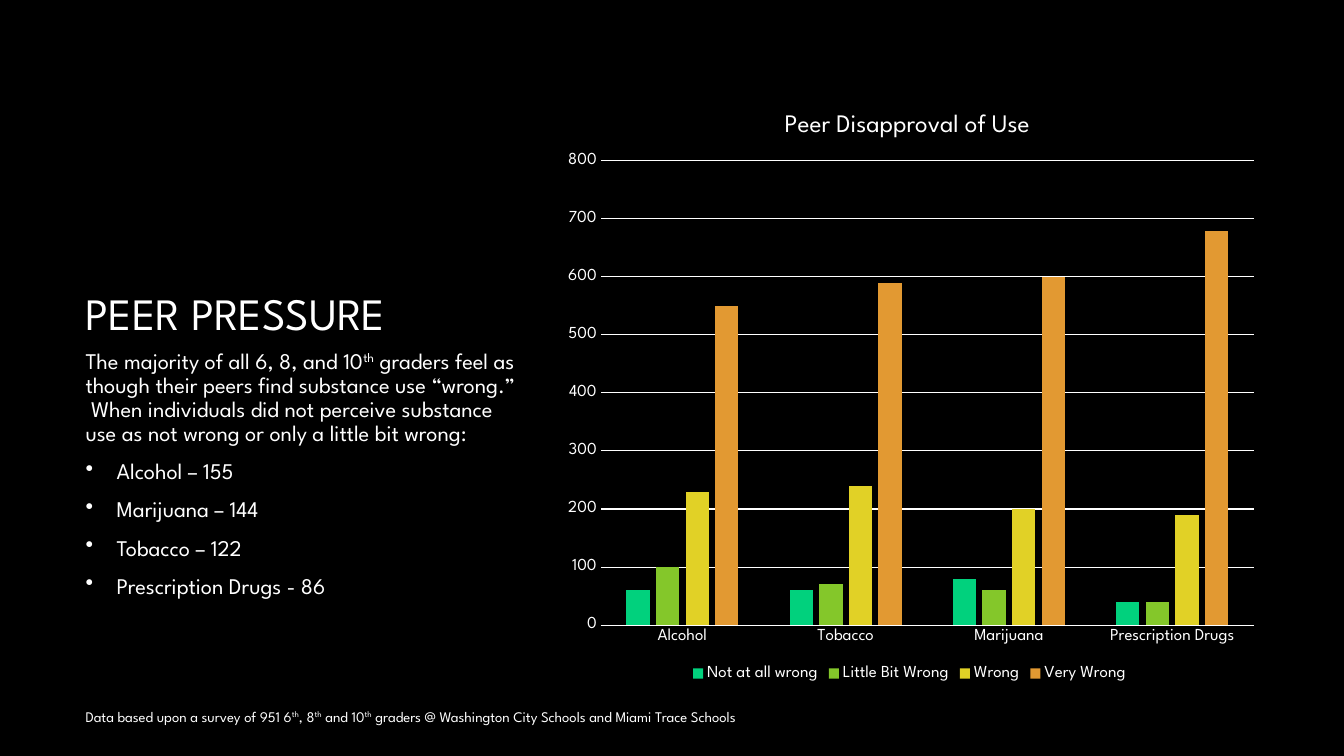
"""Build the peer pressure slide with a clustered column chart."""
from lxml import etree
from pptx import Presentation
from pptx.chart.data import CategoryChartData
from pptx.dml.color import RGBColor
from pptx.enum.chart import XL_CHART_TYPE, XL_LEGEND_POSITION, XL_TICK_MARK
from pptx.enum.text import MSO_ANCHOR
from pptx.util import Inches, Pt

COLUMNS = XL_CHART_TYPE.COLUMN_CLUSTERED
BOTTOM_LEGEND = XL_LEGEND_POSITION.BOTTOM
NO_TICK = XL_TICK_MARK.NONE
TOP, BOTTOM = MSO_ANCHOR.TOP, MSO_ANCHOR.BOTTOM
BLACK = RGBColor(0x00, 0x00, 0x00)
WHITE = RGBColor(0xFF, 0xFF, 0xFF)
GREEN = RGBColor(0x01, 0xD1, 0x7D)
LIME = RGBColor(0x84, 0xC7, 0x2A)
YELLOW = RGBColor(0xE1, 0xD1, 0x26)
ORANGE = RGBColor(0xE2, 0x99, 0x32)
FONT = "League Spartan"
DRAWING = "{http://schemas.openxmlformats.org/drawingml/2006/main}"
CHART = "{http://schemas.openxmlformats.org/drawingml/2006/chart}"


def add_text(page, left, top, width, height, anchor, size, paragraphs):
    """Add a text box; a run reading "th" is raised."""
    box = page.shapes.add_textbox(Inches(left), Inches(top), Inches(width), Inches(height))
    frame = box.text_frame
    frame.word_wrap = True
    frame.vertical_anchor = anchor
    for index, runs in enumerate(paragraphs):
        para = frame.add_paragraph() if index else frame.paragraphs[0]
        for text in runs:
            span = para.add_run()
            span.text = text
            span.font.name = FONT
            span.font.size = Pt(size)
            span.font.color.rgb = WHITE
            if text == "th":
                span.font._element.set("baseline", "30000")
    return frame


def place(element, index, **fractions):
    """Fix a chart part at fractions of the chart area."""
    for old in element.findall(CHART + "layout"):
        element.remove(old)
    layout = etree.Element(CHART + "layout")
    manual = etree.SubElement(layout, CHART + "manualLayout")
    if "w" in fractions:
        etree.SubElement(manual, CHART + "layoutTarget", val="inner")
    for mode in ("xMode", "yMode"):
        etree.SubElement(manual, CHART + mode, val="edge")
    for name, value in fractions.items():
        etree.SubElement(manual, CHART + name, val=str(value))
    element.insert(index, layout)


deck = Presentation()
deck.slide_width, deck.slide_height = Inches(13.33), Inches(7.5)
page = deck.slides.add_slide(deck.slide_layouts[6])
page.background.fill.solid()
page.background.fill.fore_color.rgb = BLACK

heading = add_text(page, 0.75, 1.67, 4.5, 1.75, BOTTOM, 32, [["PEER PRESSURE"]])
heading.paragraphs[0].line_spacing = 0.9

body = add_text(page, 0.75, 3.42, 4.5, 3.38, TOP, 16, [
    ["The majority of all 6, 8, and 10", "th",
     " graders feel as though their peers find substance use “wrong.”  When individuals "
     "did not perceive substance use as not wrong or only a little bit wrong:"],
    ["Alcohol – 155"],
    ["Marijuana – 144"],
    ["Tobacco – 122"],
    ["Prescription Drugs - 86"],
])
for index, para in enumerate(body.paragraphs):
    para.line_spacing = 0.9
    if index:
        para.space_before = Pt(10)
        properties = para._p.get_or_add_pPr()
        properties.set("marL", str(Inches(0.31)))
        properties.set("indent", str(-Inches(0.31)))
        etree.SubElement(properties, DRAWING + "buChar", char="•")

note = add_text(page, 0.75, 6.95, 8.5, 0.4, TOP, 10.5, [
    ["Data based upon a survey of 951 6", "th", ", 8", "th", " and 10", "th",
     " graders @ Washington City Schools and Miami Trace Schools"],
])
note.margin_top = Inches(0.07)

series_rows = [
    ("Not at all wrong", (60, 60, 80, 40), GREEN),
    ("Little Bit Wrong", (100, 70, 60, 40), LIME),
    ("Wrong", (230, 240, 200, 190), YELLOW),
    ("Very Wrong", (550, 590, 600, 680), ORANGE),
]
data = CategoryChartData()
data.categories = ["Alcohol", "Tobacco", "Marijuana", "Prescription Drugs"]
for name, values, _ in series_rows:
    data.add_series(name, values)
chart = page.shapes.add_chart(
    COLUMNS, Inches(5.46), Inches(0.82), Inches(7.12), Inches(5.98), data).chart

chart.has_title = True
title_span = chart.chart_title.text_frame.paragraphs[0].add_run()
title_span.text = "Peer Disapproval of Use"
title_span.font.bold = False
chart.has_legend = True
chart.legend.position = BOTTOM_LEGEND
chart.legend.include_in_layout = False
for font, size in (
    (chart.font, 10),
    (title_span.font, 18),
    (chart.legend.font, 12),
    (chart.category_axis.tick_labels.font, 12),
    (chart.value_axis.tick_labels.font, 12),
):
    font.name = FONT
    font.size = Pt(size)
    font.color.rgb = WHITE

plot = chart.plots[0]
plot.gap_width = 219
plot.overlap = -27
plot.vary_by_categories = False
for series, (_, _, color) in zip(plot.series, series_rows):
    series.format.fill.solid()
    series.format.fill.fore_color.rgb = color

value_axis = chart.value_axis
value_axis.minimum_scale, value_axis.maximum_scale, value_axis.major_unit = 0, 800, 100
value_axis.has_major_gridlines = True
value_axis.format.line.fill.background()
for axis in (chart.category_axis, value_axis):
    axis.major_tick_mark = axis.minor_tick_mark = NO_TICK
for line in (chart.category_axis.format.line, value_axis.major_gridlines.format.line):
    line.color.rgb = WHITE
    line.width = Pt(0.75)

place(chart.chart_title._element, 1, x=0.32, y=0.04)
place(chart._chartSpace.find(".//" + CHART + "plotArea"), 0, x=0.07, y=0.13, w=0.91, h=0.77)

deck.save("out.pptx")
